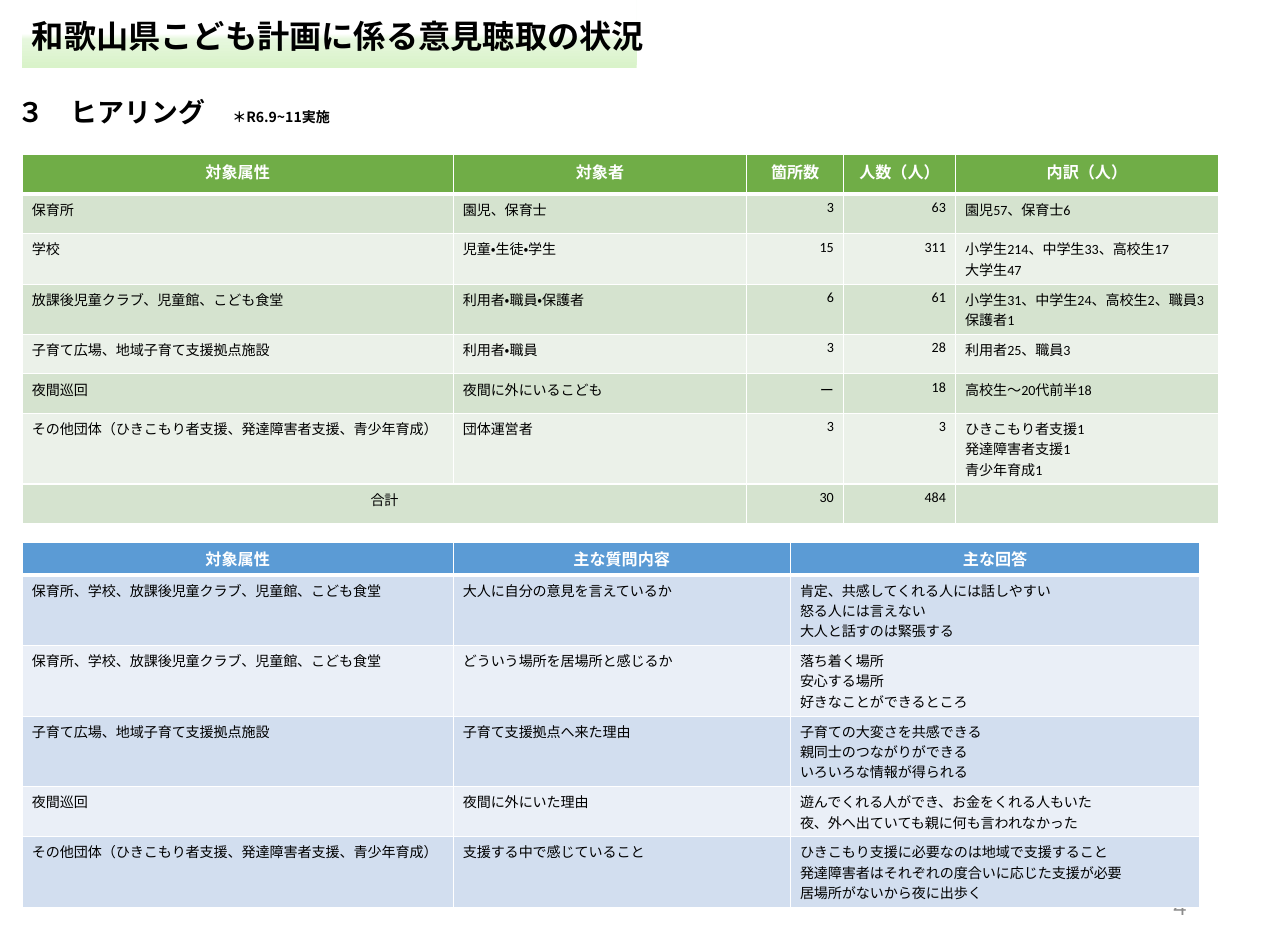
from copy import deepcopy

from lxml.etree import SubElement
from pptx import Presentation
from pptx.dml.color import RGBColor
from pptx.enum.lang import MSO_LANGUAGE_ID as Lang
from pptx.enum.shapes import MSO_SHAPE as Shape
from pptx.enum.text import MSO_ANCHOR as Anchor, MSO_AUTO_SIZE as AutoSize, PP_ALIGN as Align
from pptx.oxml.ns import qn
from pptx.util import Inches, Pt

BLACK = RGBColor(0x00, 0x00, 0x00)
WHITE = RGBColor(0xFF, 0xFF, 0xFF)
GRAY = RGBColor(0x8C, 0x8C, 0x8C)
GREEN = RGBColor(0x70, 0xAD, 0x47)
GREEN_BANDS = RGBColor(0xD5, 0xE3, 0xCF), RGBColor(0xEB, 0xF1, 0xE9)
BLUE = RGBColor(0x5B, 0x9B, 0xD5)
BLUE_BANDS = RGBColor(0xD2, 0xDE, 0xEF), RGBColor(0xEA, 0xEF, 0xF7)
TITLE_STOPS = (
    (0, RGBColor(0xD9, 0xF3, 0xC9)),
    (0.42, RGBColor(0xE6, 0xF7, 0xDD)),
    (0.5, WHITE),
)
GOTHIC = "Noto Sans CJK JP"
MARGIN = 0.23
LINES_TO_HEIGHT = {1: 0.41, 2: 0.52, 3: 0.73}


def add_run(paragraph, text, size, color=BLACK, bold=False, name="Calibri"):
    run = paragraph.add_run()
    run.text = text
    settings = {"size": Pt(size), "bold": bold, "name": name, "language_id": Lang.JAPANESE}
    for key, value in settings.items():
        setattr(run.font, key, value)
    run.font.color.rgb = color
    if name == GOTHIC:
        east_asian = run.font._element.makeelement(qn("a:ea"), {"typeface": name})
        run.font._element.find(qn("a:latin")).addnext(east_asian)


def add_survey_table(top, widths, heights, rows, header_color, bands, aligns):
    """Add a table with a coloured header row and alternating body rows."""
    frame = slide.shapes.add_table(
        len(rows), len(widths), Inches(MARGIN), Inches(top),
        Inches(sum(widths)), Inches(sum(heights)))
    table = frame.table
    for column, width in zip(table.columns, widths):
        column.width = Inches(width)
    for index, (row, height, texts) in enumerate(zip(table.rows, heights, rows)):
        row.height = Inches(height)
        header = index == 0
        for cell, text, align in zip(row.cells, texts, aligns):
            if header:
                properties = cell._tc.get_or_add_tcPr()
                border = SubElement(properties, qn("a:lnB"), w=str(Pt(3)))
                border_fill = SubElement(border, qn("a:solidFill"))
                SubElement(border_fill, qn("a:srgbClr"), val=str(WHITE))
            cell.fill.solid()
            cell.fill.fore_color.rgb = header_color if header else bands[(index - 1) % 2]
            for number, line in enumerate(text.split("\n") if text else ()):
                text_frame = cell.text_frame
                paragraph = text_frame.add_paragraph() if number else text_frame.paragraphs[0]
                paragraph.alignment = Align.CENTER if header else align
                add_run(paragraph, line, 12 if header else 10.5,
                        WHITE if header else BLACK, header)
    return table


presentation = Presentation()
presentation.slide_width = Inches(13.33)
presentation.slide_height = Inches(9.84)
slide = presentation.slides.add_slide(presentation.slide_layouts[5])

# Title over a green band fading upwards
title = slide.shapes.title
title.left, title.top, title.width, title.height = map(Inches, (MARGIN, 0, 6.8, 0.7))
title_format = {
    "auto_size": AutoSize.NONE, "word_wrap": True, "vertical_anchor": Anchor.MIDDLE,
    "margin_left": Inches(0.1), "margin_right": Inches(0.1),
    "margin_top": Inches(0.08), "margin_bottom": Inches(0.05),
}
for key, value in title_format.items():
    setattr(title.text_frame, key, value)
paragraph = title.text_frame.paragraphs[0]
paragraph.alignment = Align.LEFT
add_run(paragraph, "和歌山県こども計画に係る意見聴取の状況", 24, bold=True, name=GOTHIC)

band = slide.shapes.add_shape(Shape.RECTANGLE, *map(Inches, (MARGIN, 0, 6.36, 0.7)))
band.shadow.inherit = False
band.line.fill.background()
band.fill.gradient()
stop_list = band._element.spPr.find(qn("a:gradFill")).find(qn("a:gsLst"))
stop_list.append(deepcopy(stop_list[-1]))
for stop, (position, color) in zip(band.fill.gradient_stops, TITLE_STOPS):
    stop.position = position
    stop.color.rgb = color
band.fill.gradient_angle = 90
title._element.addprevious(band._element)

# Section heading and page number
labels = (
    ((0.08, 0.88, 4.81, 0.55), Align.LEFT, 6,
     (("３　ヒアリング　", 20, BLACK, True, GOTHIC), ("＊R6.9~11実施", 10.5, BLACK, True, GOTHIC))),
    ((9.42, 9.12, 3, 0.52), Align.RIGHT, 0, (("４", 15.8, GRAY),)),
)
for box, align, space, runs in labels:
    label = slide.shapes.add_textbox(*map(Inches, box))
    label.text_frame.word_wrap = True
    label.text_frame.vertical_anchor = Anchor.MIDDLE
    paragraph = label.text_frame.paragraphs[0]
    paragraph.alignment = align
    paragraph.space_before = Pt(space)
    for run in runs:
        add_run(paragraph, *run)

# Participants by group
participants = (
    ("対象属性", "対象者", "箇所数", "人数（人）", "内訳（人）"),
    ("保育所", "園児、保育士", "3", "63", "園児57、保育士6"),
    ("学校", "児童・生徒・学生", "15", "311", "小学生214、中学生33、高校生17\n大学生47"),
    ("放課後児童クラブ、児童館、こども食堂", "利用者・職員・保護者", "6", "61",
     "小学生31、中学生24、高校生2、職員3保護者1"),
    ("子育て広場、地域子育て支援拠点施設", "利用者・職員", "3", "28", "利用者25、職員3"),
    ("夜間巡回", "夜間に外にいるこども", "ー", "18", "高校生～20代前半18"),
    ("その他団体（ひきこもり者支援、発達障害者支援、青少年育成）", "団体運営者", "3", "3",
     "ひきこもり者支援1\n発達障害者支援1\n青少年育成1"),
    ("合計", "", "30", "484", ""),
)
participant_lines = (1, 1, 2, 2, 1, 1, 3, 1)
participant_table = add_survey_table(
    1.6, (4.46, 3.04, 1, 1.16, 2.72), [LINES_TO_HEIGHT[lines] for lines in participant_lines],
    participants, GREEN, GREEN_BANDS,
    (Align.LEFT, Align.LEFT, Align.RIGHT, Align.RIGHT, Align.LEFT))
total = participant_table.cell(len(participants) - 1, 0)
total.merge(participant_table.cell(len(participants) - 1, 1))
total.text_frame.paragraphs[0].alignment = Align.CENTER

# Questions and answers by group
answers = (
    ("対象属性", "主な質問内容", "主な回答"),
    ("保育所、学校、放課後児童クラブ、児童館、こども食堂", "大人に自分の意見を言えているか",
     "肯定、共感してくれる人には話しやすい\n怒る人には言えない\n大人と話すのは緊張する"),
    ("保育所、学校、放課後児童クラブ、児童館、こども食堂", "どういう場所を居場所と感じるか",
     "落ち着く場所\n安心する場所\n好きなことができるところ"),
    ("子育て広場、地域子育て支援拠点施設", "子育て支援拠点へ来た理由",
     "子育ての大変さを共感できる\n親同士のつながりができる\nいろいろな情報が得られる"),
    ("夜間巡回", "夜間に外にいた理由",
     "遊んでくれる人ができ、お金をくれる人もいた\n夜、外へ出ていても親に何も言われなかった"),
    ("その他団体（ひきこもり者支援、発達障害者支援、青少年育成）", "支援する中で感じていること",
     "ひきこもり支援に必要なのは地域で支援すること\n"
     "発達障害者はそれぞれの度合いに応じた支援が必要\n居場所がないから夜に出歩く"),
)
answer_heights = [LINES_TO_HEIGHT[row[-1].count("\n") + 1] for row in answers[1:]]
add_survey_table(5.61, (4.46, 3.49, 4.24), [0.34] + answer_heights,
                 answers, BLUE, BLUE_BANDS, [Align.LEFT] * 3)

presentation.save("out.pptx")
